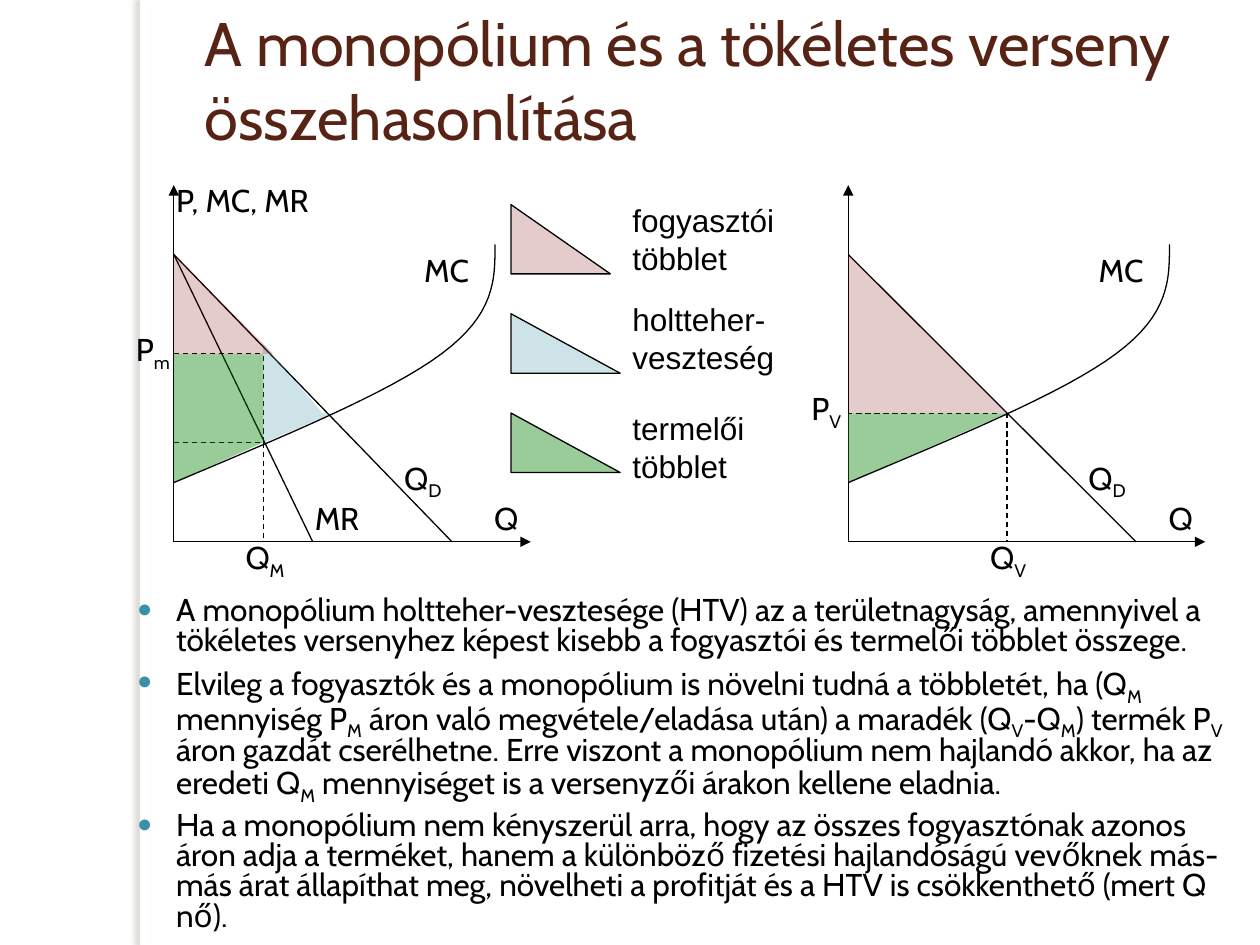
from lxml.etree import SubElement as Sub
from pptx import Presentation
from pptx.dml.color import RGBColor as RGB
from pptx.enum.dml import MSO_LINE_DASH_STYLE as Dash
from pptx.enum.shapes import MSO_CONNECTOR as Conn, MSO_SHAPE as Kind
from pptx.enum.text import MSO_ANCHOR as Anchor
from pptx.oxml.ns import qn
from pptx.util import Pt

THEME = {
    "ink": "000000", "title": "572314", "teal": "3891A7",
    "red": "800000", "green": "008000", "white": "FFFFFF", "shade": "736F63",
    "font": "Cabin", "plain": "Arial", "head": 35.1, "text": 18, "thin": 0.75,
}
ALPHA = {"red": 20, "teal": 25, "green": 40}

deck = Presentation()
deck.slide_width, deck.slide_height = Pt(720), Pt(540)
slide = deck.slides.add_slide(deck.slide_layouts[6])
shapes = slide.shapes


def write(x, y, w, h, paras, size="text", color="ink", font="font", **frame):
    box = shapes.add_textbox(Pt(x), Pt(y), Pt(w), Pt(h)).text_frame
    for name, value in {"word_wrap": True, **frame}.items():
        setattr(box, name, value)
    for n, text in enumerate(paras):
        para = box.add_paragraph() if n else box.paragraphs[0]
        for i, part in enumerate(text.split("|")):
            run = para.add_run()
            run.text = part
            look = {"size": Pt(THEME[size]), "name": THEME[font]}
            for name, value in look.items():
                setattr(run.font, name, value)
            run.font.color.rgb = RGB.from_string(THEME[color])
            if i % 2:
                run.font._element.set("baseline", "-25000")
    return box


def area(kind, x, y, w, h, color, edge=False, flip=False):
    shape = shapes.add_shape(kind, Pt(x), Pt(y), Pt(w), Pt(h))
    shape.shadow.inherit = False
    shape.fill.solid()
    shape.fill.fore_color.rgb = RGB.from_string(THEME[color])
    if color in ALPHA:
        tint = shape.element.spPr.find(".//" + qn("a:srgbClr"))
        Sub(tint, qn("a:alpha"), val=str(ALPHA[color] * 1000))
    if edge:
        shape.line.color.rgb = RGB.from_string(THEME["ink"])
        shape.line.width = Pt(THEME["thin"])
    else:
        shape.line.fill.background()
    if flip:
        shape.element.spPr.find(qn("a:xfrm")).set("flipV", "1")
    return shape


strip = area(Kind.RECTANGLE, 80, 0, 5.8, 540, "white")
glow = strip.element.spPr.find(qn("a:effectLst"))
cast = Sub(glow, qn("a:outerShdw"), blurRad=str(Pt(3)), dist=str(Pt(3)),
           dir="10800000", algn="ctr", rotWithShape="0")
Sub(Sub(cast, qn("a:srgbClr"), val=THEME["shade"]), qn("a:alpha"), val="25000")

write(110, 0, 590.5, 90, ["A monopólium és a tökéletes verseny összehasonlítása"],
      "head", "title", vertical_anchor=Anchor.MIDDLE)

body = write(64.8, 337.7, 655.2, 187.2, [
    "A monopólium holtteher-vesztesége (HTV) az a területnagyság, amennyivel a "
    "tökéletes versenyhez képest kisebb a fogyasztói és termelői többlet összege.",
    "Elvileg a fogyasztók és a monopólium is növelni tudná a többletét, ha (Q|M| "
    "mennyiség P|M| áron való megvétele/eladása után) a maradék (Q|V|-Q|M|) termék "
    "P|V| áron gazdát cserélhetne. Erre viszont a monopólium nem hajlandó akkor, ha "
    "az eredeti Q|M| mennyiséget is a versenyzői árakon kellene eladnia.",
    "Ha a monopólium nem kényszerül arra, hogy az összes fogyasztónak azonos áron "
    "adja a terméket, hanem a különböző fizetési hajlandóságú vevőknek más-más árat "
    "állapíthat meg, növelheti a profitját és a HTV is csökkenthető (mert Q nő).",
])
for para in body.paragraphs:
    for name, value in {"line_spacing": 0.8, "space_before": Pt(6)}.items():
        setattr(para, name, value)
    props = para._p.get_or_add_pPr()
    props.set("marL", str(Pt(28.8)))
    props.set("indent", str(Pt(-22.3)))
    Sub(Sub(props, qn("a:buClr")), qn("a:srgbClr"), val=THEME["teal"])
    Sub(props, qn("a:buSzPct"), val="80000")
    Sub(props, qn("a:buFont"), typeface=THEME["plain"])
    Sub(props, qn("a:buChar"), char="●")

LEFT, RIGHT = 99.3, 484.7
TOP, START, PM, PV, COST, LOW, BASE = 105.8, 145.4, 202.2, 236.2, 252.9, 275.8, 309.6
QM, QV = 51.1, 90.7

lines = [
    (LEFT, 0, START, 79.4, BASE, ""),
    (LEFT, 0, START, 159, BASE, ""),
    (RIGHT, 0, START, 164.5, BASE, ""),
    (LEFT, 0, COST, QM, COST, "dash"),
    (LEFT, QM, COST, QM, PM, "dash"),
    (LEFT, 0, PM, QM, PM, "dash"),
    (LEFT, QM, COST, QM, BASE, "dash"),
    (RIGHT, 85, PV, 0, PV, "dash"),
    (RIGHT, QV, PV, QV, BASE, "dash"),
]
for side in (LEFT, RIGHT):
    lines += [(side, 0, BASE, 0, TOP, "arrow"), (side, 0, BASE, 204, BASE, "arrow")]

for side, x1, y1, x2, y2, style in lines:
    rule = shapes.add_connector(Conn.STRAIGHT, Pt(side + x1), Pt(y1), Pt(side + x2), Pt(y2))
    rule.line.color.rgb = RGB.from_string(THEME["ink"])
    rule.line.width = Pt(THEME["thin"])
    if style == "dash":
        rule.line.dash_style = Dash.DASH
    if style == "arrow":
        Sub(rule.element.spPr.find(qn("a:ln")), qn("a:tailEnd"), type="triangle")
    Sub(rule.element.spPr, qn("a:effectLst"))

TRI = Kind.RIGHT_TRIANGLE
area(TRI, LEFT + QM, 196.6, 34, 39.6, "teal")
area(TRI, LEFT + QM, PV, 39.6, 17, "teal", flip=True)
area(TRI, LEFT, START, 56.8, 56.8, "red")
area(Kind.RECTANGLE, LEFT, PM, QM, COST - PM, "green")
area(TRI, LEFT, COST, QM, LOW - COST, "green", flip=True)
area(TRI, RIGHT, START, QV, PV - START, "red")
area(TRI, RIGHT, PV, QV, LOW - PV, "green", flip=True)

for y, w, h, color, top, text in (
    (116.9, 56.8, 39.6, "red", 111.6, "fogyasztói többlet"),
    (179.3, 62.4, 34, "teal", 168, "holtteher-veszteség"),
    (236, 62.4, 34, "green", 230.4, "termelői többlet"),
):
    area(TRI, 292, y, w, h, color, edge=True)
    write(354.3, top, 130, 50, [text], font="plain")

BENDS = [
    ((0, LOW), (61.2, 249.9), (122.4, 225), (153, PM)),
    ((153, PM), (183.6, 179.5), (183.6, 159.6), (183.6, 139.7)),
]
STEPS = 16
for side in (LEFT, RIGHT):
    dots = []
    for a, b, c, d in BENDS:
        for n in range(1, STEPS + 1):
            t = n / STEPS
            u = 1 - t
            x, y = (u**3 * p + 3 * u * u * t * q + 3 * u * t * t * r + t**3 * s
                    for p, q, r, s in zip(a, b, c, d))
            dots.append((Pt(side + x), Pt(y)))
    pen = shapes.build_freeform(Pt(side), Pt(LOW))
    pen.add_line_segments(dots, close=False)
    curve = pen.convert_to_shape()
    curve.shadow.inherit = False
    curve.fill.background()
    curve.line.color.rgb = RGB.from_string(THEME["ink"])
    curve.line.width = Pt(THEME["thin"])

for x, y, w, text in (
    (93.6, 100, 96, "P, MC, MR"),
    (172.8, 281.5, 44, "MR"),
    (223.9, 258.5, 40, "Q|D"),
    (614.9, 258.5, 40, "Q|D"),
    (70.6, 185, 40, "P|m"),
    (456.5, 218.9, 40, "P|V"),
    (133.2, 303.8, 40, "Q|M"),
    (558.7, 303.8, 40, "Q|V"),
):
    write(x, y, w, 29, [text])
for side in (LEFT, RIGHT):
    write(side + 176, 281.5, 40, 29, ["Q"])
    write(side + 136, 139.7, 57, 29, ["MC"])

deck.save("out.pptx")
